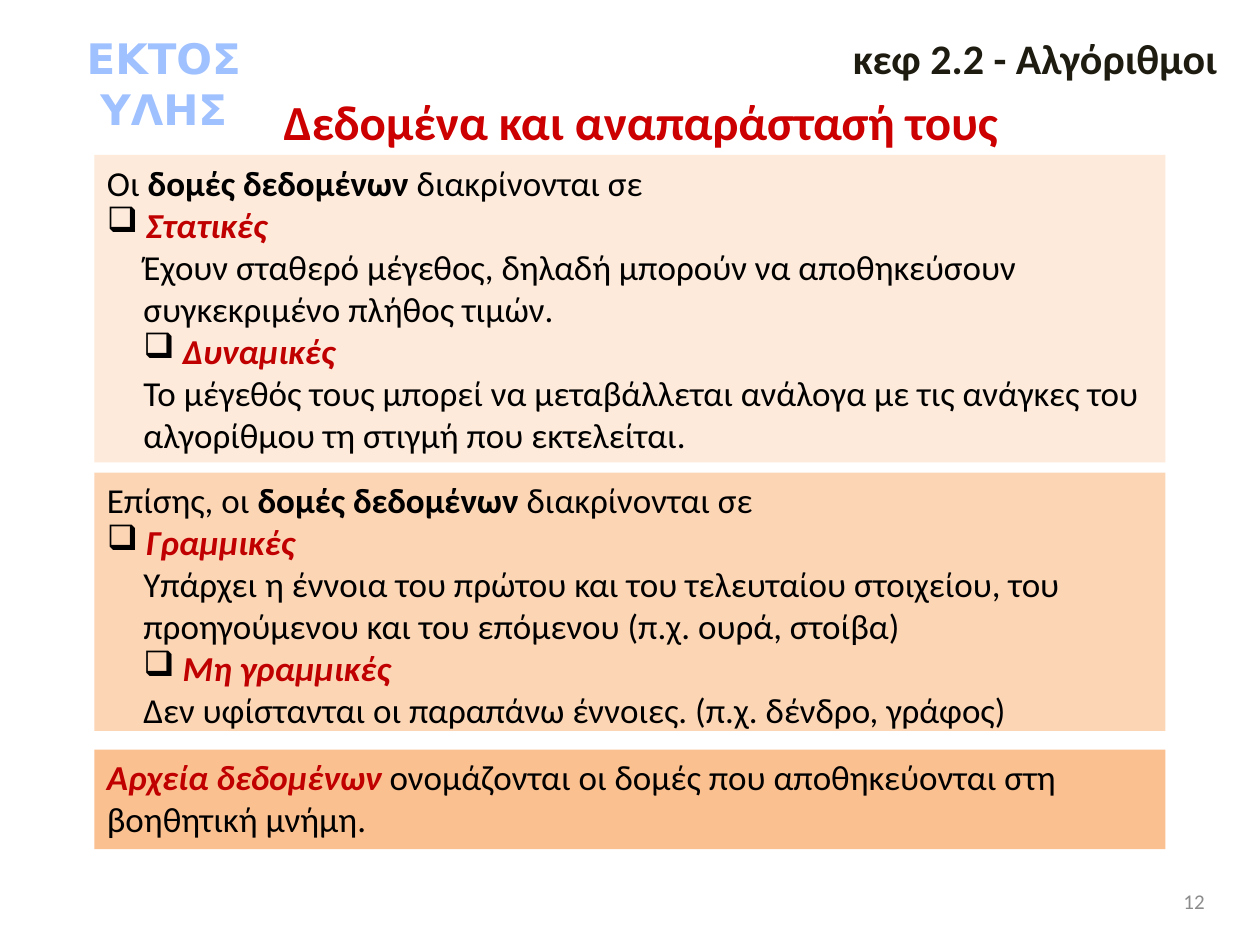
from lxml.etree import SubElement
from pptx import Presentation
from pptx.dml.color import RGBColor
from pptx.enum.shapes import MSO_SHAPE
from pptx.enum.text import MSO_ANCHOR, PP_ALIGN
from pptx.oxml.ns import qn
from pptx.util import Emu, Pt

PX = 9144
COLORS = {
    "title": "CC0000", "chapter": "1E1C11", "number": "8C8C8C", "badge": "A0C1FF",
    "text": "000000", "term": "C00000",
    "kinds": "FDEADA", "linearity": "FCD5B5", "files": "FAC090",
}
PLAIN = {"size": Pt(20), "name": "Calibri", "color": "text"}
BOLD = {**PLAIN, "bold": True}
TERM = {**BOLD, "italic": True, "color": "term"}


def px(value):
    return Emu(value * PX)


def rgb(key):
    return RGBColor.from_string(COLORS[key])


def add_run(paragraph, text, style):
    run = paragraph.add_run()
    run.text = text
    for key, value in style.items():
        if key == "color":
            run.font.color.rgb = rgb(value)
        else:
            setattr(run.font, key, value)


def indent(paragraph, left, bullet=None):
    properties = paragraph._p.get_or_add_pPr()
    properties.set("marL", str(px(left)))
    properties.set("indent", "0")
    if bullet:
        SubElement(properties, qn("a:buChar")).set("char", bullet)


def fill_line(frame, text, style, align, anchor=MSO_ANCHOR.TOP):
    frame.word_wrap = True
    frame.vertical_anchor = anchor
    paragraph = frame.paragraphs[0]
    paragraph.alignment = align
    add_run(paragraph, text, style)


def add_label(slide, box, *line):
    label = slide.shapes.add_textbox(*map(px, box))
    fill_line(label.text_frame, *line)


def place_title(slide, box, text):
    title = slide.shapes.title
    title.left, title.top, title.width, title.height = map(px, box)
    style = {"size": Pt(28), "name": "Calibri", "bold": True, "color": "title"}
    fill_line(title.text_frame, text, style, PP_ALIGN.CENTER)


def add_panel(slide, box, fill, intro, kinds=()):
    panel = slide.shapes.add_shape(MSO_SHAPE.RECTANGLE, *map(px, box))
    panel.shadow.inherit = False
    panel.fill.solid()
    panel.fill.fore_color.rgb = rgb(fill)
    panel.line.fill.background()
    frame = panel.text_frame
    frame.word_wrap = True
    frame.vertical_anchor = MSO_ANCHOR.TOP
    opening = frame.paragraphs[0]
    opening.alignment = PP_ALIGN.LEFT
    for text, style in intro:
        add_run(opening, text, style)
    for index, (term, meaning) in enumerate(kinds):
        heading = frame.add_paragraph()
        indent(heading, 29 if index else 0, "❑")
        heading.alignment = PP_ALIGN.LEFT
        add_run(heading, " ", PLAIN)
        add_run(heading, term, TERM)
        explanation = frame.add_paragraph()
        indent(explanation, 29)
        explanation.alignment = PP_ALIGN.LEFT
        add_run(explanation, meaning, PLAIN)


def structures_intro(start):
    return [(start, PLAIN), ("δομές δεδομένων ", BOLD), ("διακρίνονται σε", PLAIN)]


def main():
    deck = Presentation()
    deck.slide_width, deck.slide_height = px(1000), px(750)
    slide = deck.slides.add_slide(deck.slide_layouts[5])

    place_title(slide, (67, 68, 883, 63), "Δεδομένα και αναπαράστασή τους")
    add_label(slide, (733, 695, 233, 40), "12",
              {"size": Pt(12), "name": "Calibri", "color": "number"},
              PP_ALIGN.RIGHT, MSO_ANCHOR.MIDDLE)
    add_label(slide, (610, 21, 366, 50), "κεφ 2.2 - Αλγόριθμοι",
              {"size": Pt(24), "name": "Calibri", "bold": True, "color": "chapter"},
              PP_ALIGN.RIGHT)

    add_panel(slide, (75, 123, 850, 244), "kinds", structures_intro("Οι "), [
        ("Στατικές", "Έχουν σταθερό μέγεθος, δηλαδή μπορούν να αποθηκεύσουν "
                     "συγκεκριμένο πλήθος τιμών."),
        ("Δυναμικές", "Το μέγεθός τους μπορεί να μεταβάλλεται ανάλογα με τις "
                      "ανάγκες του αλγορίθμου τη στιγμή που εκτελείται."),
    ])
    add_panel(slide, (75, 375, 850, 205), "linearity", structures_intro("Επίσης, οι "), [
        ("Γραμμικές", "Υπάρχει η έννοια του πρώτου και του τελευταίου στοιχείου, "
                      "του προηγούμενου και του επόμενου (π.χ. ουρά, στοίβα)"),
        ("Μη γραμμικές", "Δεν υφίστανται οι παραπάνω έννοιες. (π.χ. δένδρο, γράφος)"),
    ])
    add_panel(slide, (75, 595, 850, 79), "files", [
        ("Αρχεία δεδομένων ", TERM),
        ("ονομάζονται οι δομές που αποθηκεύονται στη βοηθητική μνήμη.", PLAIN),
    ])

    add_label(slide, (27, 21, 206, 91), "ΕΚΤΟΣ ΥΛΗΣ",
              {"size": Pt(24), "name": "DejaVu Sans", "bold": True, "color": "badge"},
              PP_ALIGN.CENTER)
    deck.save("out.pptx")


if __name__ == "__main__":
    main()
